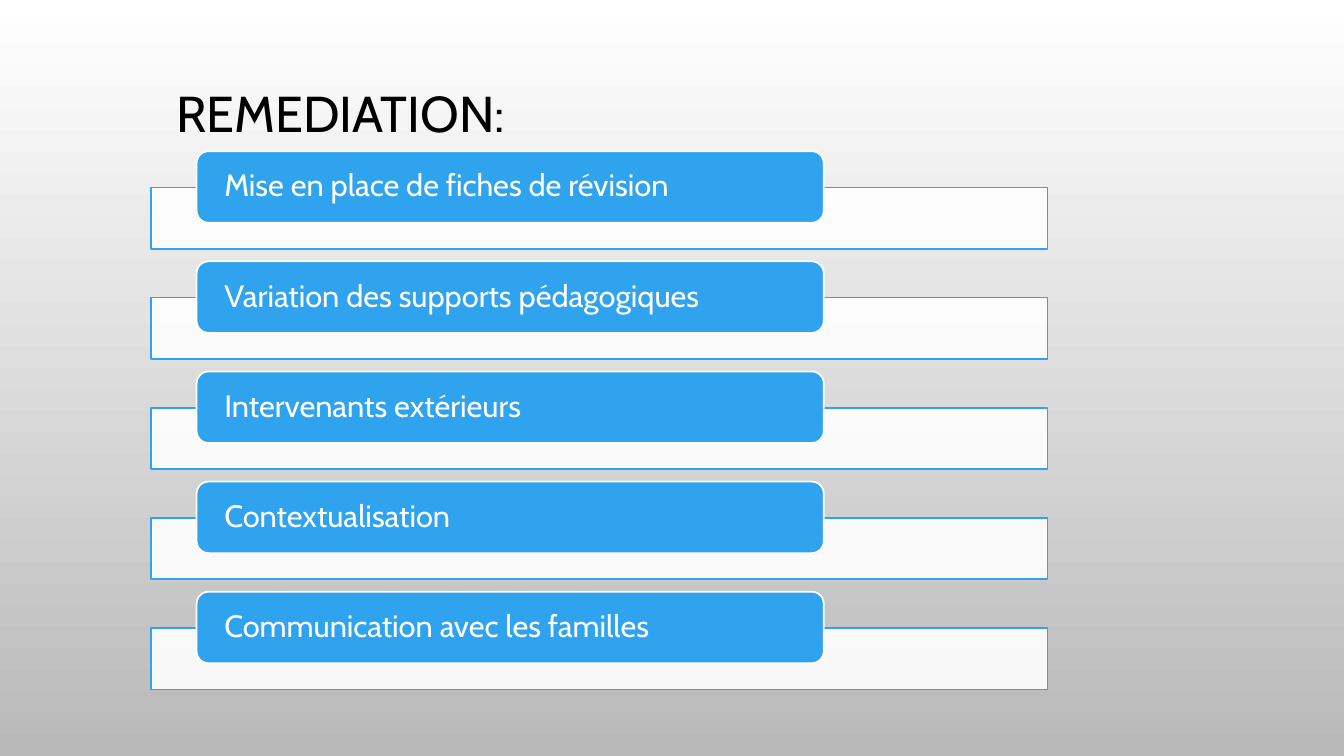
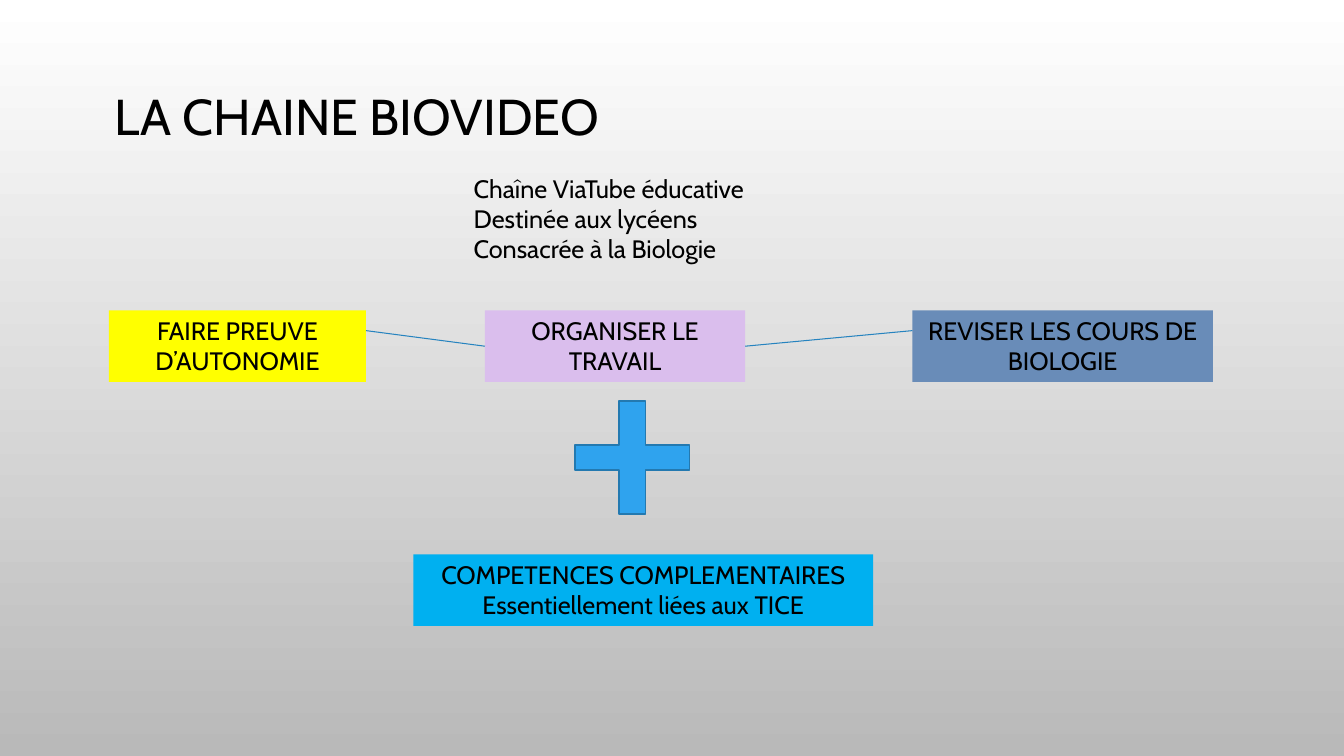
from lxml import etree
from pptx import Presentation
from pptx.dml.color import RGBColor
from pptx.enum import shapes, text
from pptx.oxml.ns import qn
from pptx.util import Inches, Pt

FONT = "Cabin"
BLACK = RGBColor(0x00, 0x00, 0x00)
WHITE = RGBColor(0xFF, 0xFF, 0xFF)
GREY = RGBColor(0xB9, 0xB9, 0xB9)
BLUE = RGBColor(0x2F, 0xA3, 0xEE)
DARK_BLUE = RGBColor(0x23, 0x79, 0xB0)
LINK_BLUE = RGBColor(0x26, 0x83, 0xBF)
CYAN = RGBColor(0x00, 0xB0, 0xF0)
YELLOW = RGBColor(0xFF, 0xFF, 0x00)
LILAC = RGBColor(0xDA, 0xBE, 0xED)
SLATE = RGBColor(0x69, 0x8C, 0xB8)

REMEDIES = [
    "Mise en place de fiches de révision",
    "Variation des supports pédagogiques",
    "Intervenants extérieurs",
    "Contextualisation",
    "Communication avec les familles",
]
ROW_TOP, ROW_PITCH = 1.5, 4.37 / 4

CHANNEL = [
    "Chaîne ViaTube éducative",
    "Destinée aux lycéens",
    "Consacrée à la Biologie",
]
GOALS = [  # text, left, width, colour
    ("FAIRE PREUVE D’AUTONOMIE", 1.08, 2.55, YELLOW),
    ("ORGANISER LE TRAVAIL", 4.81, 2.58, LILAC),
    ("REVISER LES COURS DE BIOLOGIE", 9.05, 2.98, SLATE),
]
SKILLS = ["COMPETENCES COMPLEMENTAIRES", "Essentiellement liées aux TICE"]
GOAL_TOP, LABEL_HEIGHT = 3.08, 0.71
LINK_DROP = 0.2  # from the top of an outer goal to its link

LEFT, CENTER = text.PP_ALIGN.LEFT, text.PP_ALIGN.CENTER
TOP, MIDDLE = text.MSO_ANCHOR.TOP, text.MSO_ANCHOR.MIDDLE


def write(box, lines, size, color=BLACK, align=LEFT, anchor=TOP, spacing=1.0):
    frame = box.text_frame
    frame.word_wrap = True
    frame.vertical_anchor = anchor
    for index, line in enumerate(lines):
        para = frame.add_paragraph() if index else frame.paragraphs[0]
        para.alignment = align
        para.line_spacing = spacing
        span = para.add_run()
        span.text = line
        span.font.name = FONT
        span.font.size = Pt(size)
        span.font.color.rgb = color


def add_box(page, kind, area, fill, line=None):
    box = page.shapes.add_shape(kind, *map(Inches, area))
    box.shadow.inherit = False
    box.fill.solid()
    box.fill.fore_color.rgb = fill
    if line is None:
        box.line.fill.background()
    else:
        box.line.color.rgb = line
        box.line.width = Pt(1.25)
    return box


def add_label(page, lines, left, top, width, fill):
    area = (left, top, width, LABEL_HEIGHT)
    label = add_box(page, shapes.MSO_SHAPE.RECTANGLE, area, fill)
    write(label, lines, 18, align=CENTER)
    return label


def set_opacity(shape, percent):
    color = shape.fill._xPr.find(qn("a:solidFill"))[0]
    etree.SubElement(color, qn("a:alpha"), val=str(percent * 1000))


def add_link(page, goal, side, x, y):
    """Join one side of a goal to a free point."""
    link = page.shapes.add_connector(
        shapes.MSO_CONNECTOR.STRAIGHT, Inches(x), Inches(y), Inches(x), Inches(y))
    link.begin_connect(goal, side)
    link.line.color.rgb = LINK_BLUE
    link.line.width = Pt(0.75)
    etree.SubElement(link._element.spPr, qn("a:effectLst"))


def set_background(master):
    fill = master.background.fill
    fill.gradient()
    fill.gradient_angle = 270
    for stop, color, position in zip(fill.gradient_stops, (WHITE, GREY), (0, 1)):
        stop.color.rgb = color
        stop.position = position


def add_page(deck, title, width, height):
    page = deck.slides.add_slide(deck.slide_layouts.get_by_name("Title Only"))
    box = page.shapes.title
    box.left, box.top = Inches(1), Inches(0.68)
    box.width, box.height = Inches(width), Inches(height)
    write(box, [title], 36, align=CENTER, anchor=MIDDLE, spacing=0.9)
    return page


def build_remediation(deck):
    page = add_page(deck, "REMEDIATION:", 4.76, 0.95)
    for index, remedy in enumerate(REMEDIES):
        top = ROW_TOP + index * ROW_PITCH
        band = add_box(page, shapes.MSO_SHAPE.RECTANGLE,
                       (1.5, top + 0.36, 8.89, 0.61), WHITE, BLUE)
        set_opacity(band, 90)
        pill = add_box(page, shapes.MSO_SHAPE.ROUNDED_RECTANGLE,
                       (1.95, top, 6.22, 0.71), BLUE, WHITE)
        frame = pill.text_frame
        frame.margin_left = frame.margin_right = Inches(0.24)
        frame.margin_top = frame.margin_bottom = 0
        write(pill, [remedy], 22, WHITE, anchor=MIDDLE, spacing=0.9)


def build_channel(deck):
    page = add_page(deck, "LA CHAINE BIOVIDEO", 5.08, 1)
    intro = page.shapes.add_textbox(*map(Inches, (4.6, 1.67, 4.44, 1.01)))
    write(intro, CHANNEL, 18)

    plus = add_box(page, shapes.MSO_SHAPE.CROSS, (5.7, 3.98, 1.14, 1.12),
                   BLUE, DARK_BLUE)
    plus.adjustments[0] = 0.39
    add_label(page, SKILLS, 4.1, 5.5, 4.56, CYAN)

    goals = [add_label(page, [goal], left, GOAL_TOP, width, fill)
             for goal, left, width, fill in GOALS]
    first_right = GOALS[0][1] + GOALS[0][2]
    last_left = GOALS[2][1]
    for side, x in ((1, first_right), (3, last_left)):
        add_link(page, goals[1], side, x, GOAL_TOP + LINK_DROP)


def main():
    deck = Presentation()
    deck.slide_width, deck.slide_height = Inches(13.33), Inches(7.5)
    set_background(deck.slide_master)
    build_remediation(deck)
    build_channel(deck)
    deck.save("out.pptx")


if __name__ == "__main__":
    main()
